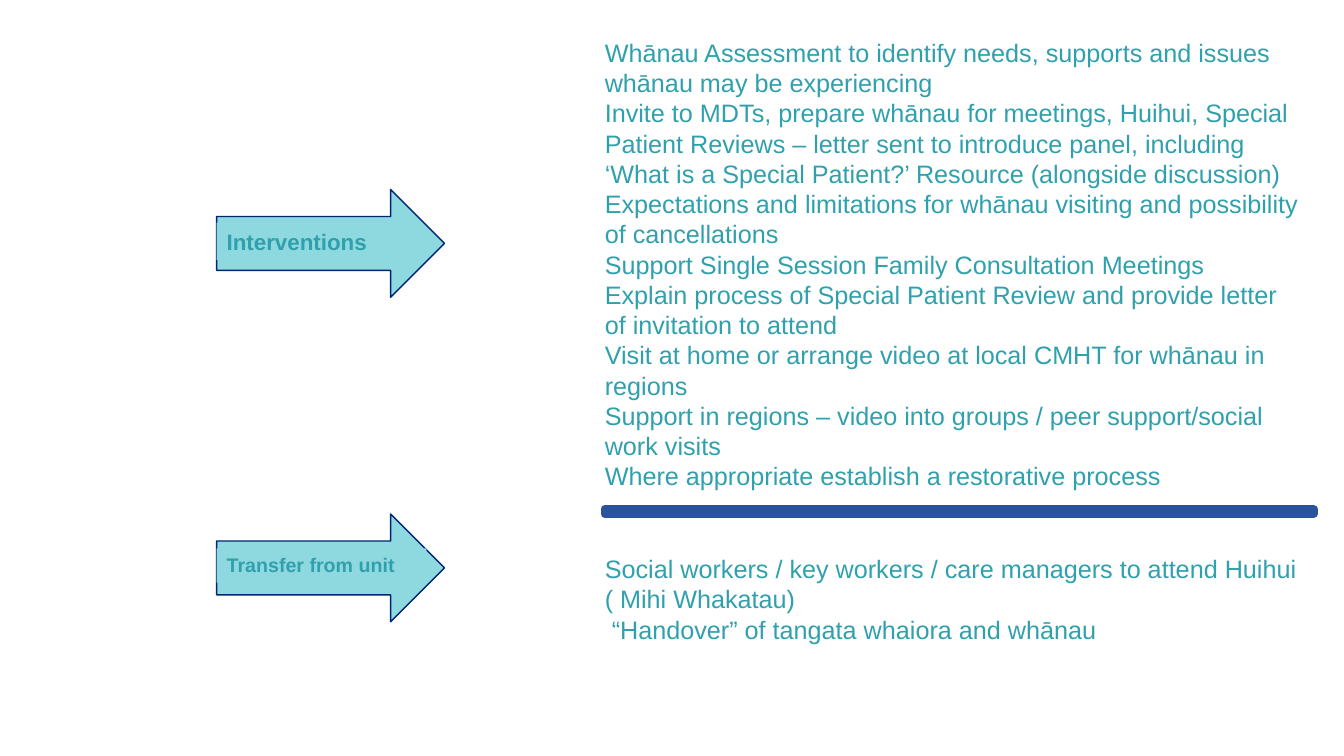
from lxml import etree
from pptx import Presentation
from pptx import util as u
from pptx.dml.color import RGBColor
from pptx.enum import shapes, text
from pptx.oxml.ns import qn

# Content: each stage has an arrow label and its list of actions
STAGES = [
    dict(
        label="Interventions", label_size=16,
        arrow_top=135.4, label_box=(159.1, 128.2, 26.6),  # top, width, height
        list_box=(424.8, 23, 514.1, 334.1),
        actions=[
            "Whānau Assessment to identify needs, supports and issues whānau may be experiencing",
            "Invite to MDTs, prepare whānau for meetings, Huihui, Special Patient Reviews – letter sent "
            "to introduce panel, including ‘What is a Special Patient?’ Resource (alongside discussion)",
            "Expectations and limitations for whānau visiting and possibility of cancellations",
            "Support Single Session Family Consultation Meetings",
            "Explain process of Special Patient Review and provide letter of invitation to attend",
            "Visit at home or arrange video at local CMHT for whānau in regions",
            "Support in regions – video into groups / peer support/social work visits",
            "Where appropriate establish a restorative process",
        ],
    ),
    dict(
        label="Transfer from unit", label_size=14,
        arrow_top=367.2, label_box=(391.7, 149.8, 24.5),
        list_box=(424.8, 391.7, 520.6, 72.7),
        actions=[
            "Social workers / key workers / care managers to attend Huihui",
            "( Mihi Whakatau)",
            " “Handover” of tangata whaiora and whānau",
        ],
    ),
]
ARROW_LEFT, ARROW_WIDTH, ARROW_HEIGHT = 154.8, 162.7, 77
DIVIDER_BOX = (432, 363.6, 506.2, 3.6)

THEME = dict(
    font="Arial", list_size=18,
    ink=RGBColor.from_string("30A1AC"),
    arrow=RGBColor.from_string("8ED8DF"),
    outline=RGBColor.from_string("002671"),
    divider=RGBColor.from_string("2B539D"),
)


def points(box):
    return [u.Pt(value) for value in box]


def add_block(parent, preset, box, fill, line=None, line_width=1):
    block = parent.add_shape(preset, *points(box))
    block.shadow.inherit = False
    block.fill.solid()
    block.fill.fore_color.rgb = fill
    if line is None:
        block.line.fill.background()
    else:
        block.line.color.rgb = line
        block.line.width = u.Pt(line_width)
    return block


def write(box, lines, size, bold=False):
    frame = box.text_frame
    frame.word_wrap = True
    frame.auto_size = text.MSO_AUTO_SIZE.NONE
    frame.vertical_anchor = text.MSO_ANCHOR.TOP
    for index, line in enumerate(lines):
        para = frame.paragraphs[0] if index == 0 else frame.add_paragraph()
        props = para._p.get_or_add_pPr()
        props.set("marL", "0")
        props.set("indent", "0")
        etree.SubElement(props, qn("a:buNone"))
        para.alignment = text.PP_ALIGN.LEFT
        para.space_before = para.space_after = u.Pt(0)
        span = para.add_run()
        span.text = line
        span.font.name = THEME["font"]
        span.font.size = u.Pt(size)
        span.font.bold = bold
        span.font.color.rgb = THEME["ink"]


deck = Presentation()
deck.slide_width, deck.slide_height = u.Pt(960), u.Pt(540)
page = deck.slides.add_slide(deck.slide_layouts[3])
title, *lists = page.placeholders
title._element.getparent().remove(title._element)

for stage, body in zip(STAGES, lists):
    # Arrow with its label
    group = page.shapes.add_group_shape().shapes
    arrow_box = (ARROW_LEFT, stage["arrow_top"], ARROW_WIDTH, ARROW_HEIGHT)
    add_block(group, shapes.MSO_SHAPE.RIGHT_ARROW, arrow_box, THEME["arrow"], THEME["outline"])
    label = add_block(group, shapes.MSO_SHAPE.RECTANGLE,
                      (ARROW_LEFT, *stage["label_box"]), THEME["arrow"])
    write(label, [stage["label"]], stage["label_size"], bold=True)

    # List of actions
    body.left, body.top, body.width, body.height = points(stage["list_box"])
    write(body, stage["actions"], THEME["list_size"])

# Divider between the stages
add_block(page.shapes, shapes.MSO_SHAPE.RECTANGLE, DIVIDER_BOX,
          THEME["divider"], THEME["divider"], 6)

deck.save("out.pptx")
